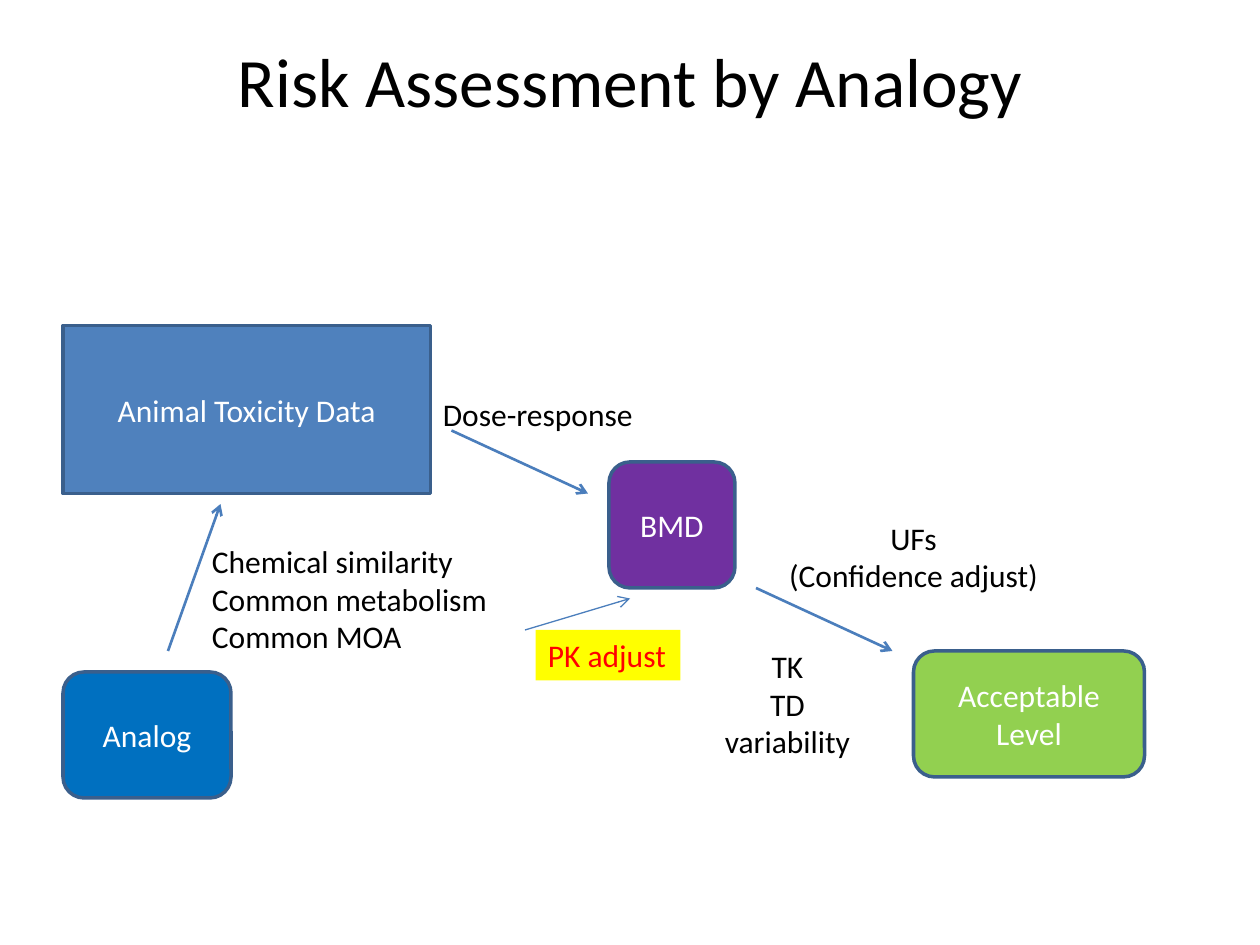
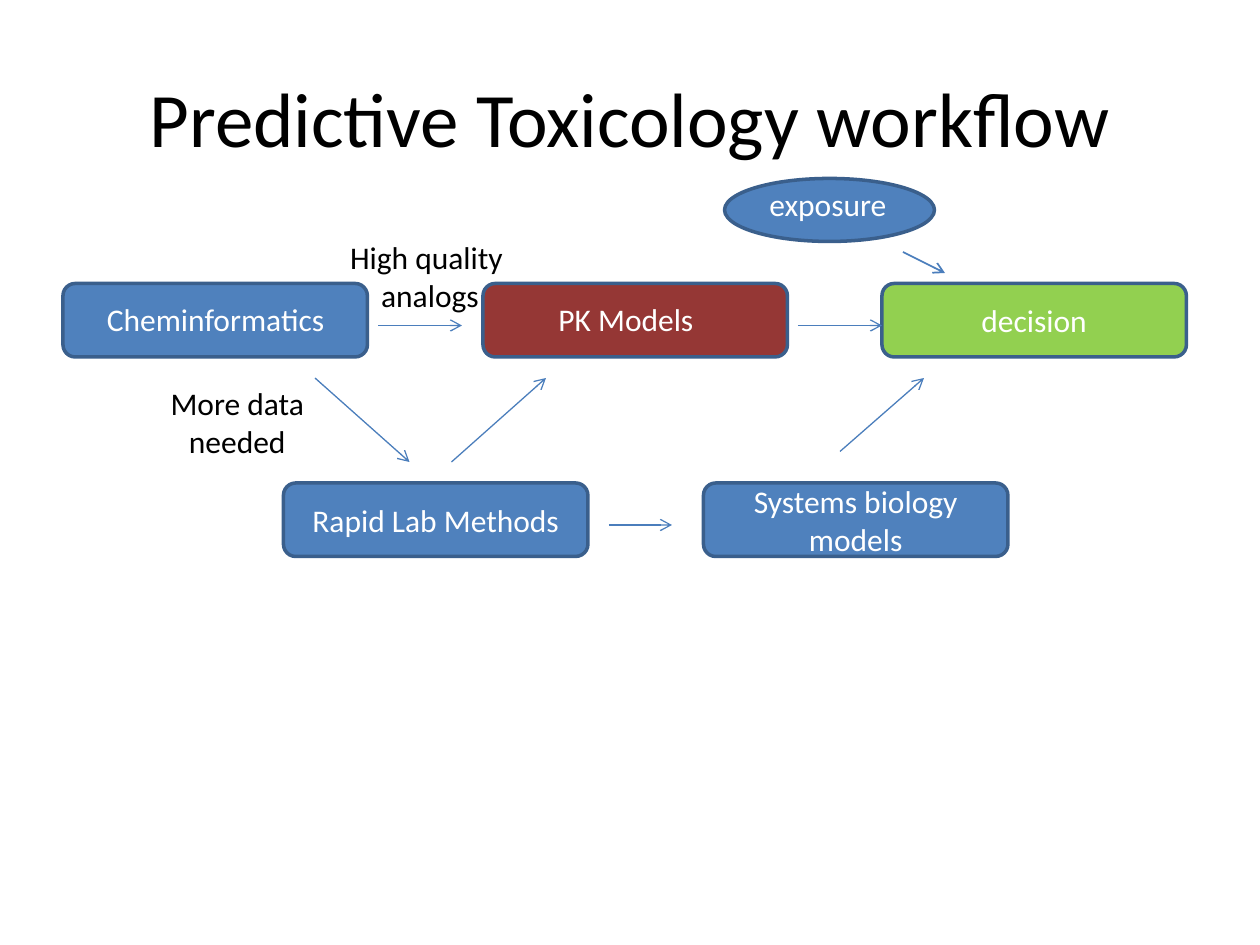
from dataclasses import dataclass

from lxml.etree import SubElement
from pptx import Presentation
from pptx.dml.color import RGBColor as RGB
from pptx.enum.shapes import MSO_CONNECTOR as CONNECTOR, MSO_SHAPE as SHAPE
from pptx.enum.text import MSO_ANCHOR as ANCHOR, MSO_AUTO_SIZE as AUTO, PP_ALIGN as ALIGN
from pptx.oxml.ns import qn
from pptx.util import Pt

PX = 7620
TITLE_ONLY = 5


@dataclass(frozen=True)
class Theme:
    font: str = "Calibri"
    black: str = "000000"
    white: str = "FFFFFF"
    blue: str = "4F81BD"
    outline: str = "3A5F8C"
    arrow: str = "4B7EBC"
    purple: str = "7030A0"
    green: str = "92D050"
    deep_blue: str = "0070C0"
    maroon: str = "953735"
    yellow: str = "FFFF00"
    red: str = "FF0000"
    body: float = 18
    heading: float = 44
    heading_small: float = 39.6
    border: float = 2
    thin: float = 0.75
    medium: float = 1
    thick: float = 1.5


def emu(*lengths):
    return [length * PX for length in lengths]


def apply(target, values):
    for name, value in values.items():
        setattr(target, name, value)


class Deck:
    def __init__(self, theme):
        self.theme = theme
        self.prs = Presentation()
        self.prs.slide_width, self.prs.slide_height = emu(1200, 900)
        self.slide = None

    def set_text(self, shape, text, color, size=None, align=ALIGN.CENTER, **frame):
        shape.text_frame.text = text
        apply(shape.text_frame, frame)
        for paragraph in shape.text_frame.paragraphs:
            paragraph.alignment = align
            apply(paragraph.font, {"name": self.theme.font,
                                   "size": Pt(size or self.theme.body)})
            paragraph.font.color.rgb = RGB.from_string(color)

    def titled_slide(self, text, size, **frame):
        self.slide = self.prs.slides.add_slide(self.prs.slide_layouts[TITLE_ONLY])
        title = self.slide.shapes.title
        apply(title, dict(zip(("left", "top", "width", "height"), emu(60, 36, 1080, 150))))
        settings = {"vertical_anchor": ANCHOR.MIDDLE, "auto_size": AUTO.NONE,
                    "word_wrap": True, **frame}
        self.set_text(title, text, self.theme.black, size, **settings)

    def box(self, bounds, text="", fill=None, kind=SHAPE.ROUNDED_RECTANGLE):
        shape = self.slide.shapes.add_shape(kind, *emu(*bounds))
        shape.shadow.inherit = False
        if fill:
            shape.fill.solid()
            shape.fill.fore_color.rgb = RGB.from_string(fill)
            shape.line.color.rgb = RGB.from_string(self.theme.outline)
            shape.line.width = Pt(self.theme.border)
        else:
            shape.fill.background()
            shape.line.fill.background()
        if text:
            color = self.theme.white if fill else self.theme.black
            self.set_text(shape, text, color, vertical_anchor=ANCHOR.MIDDLE, word_wrap=True)
        return shape

    def label(self, bounds, text, color=None, fill=None, align=ALIGN.LEFT, anchor=ANCHOR.TOP):
        label = self.slide.shapes.add_textbox(*emu(*bounds))
        if fill:
            label.fill.solid()
            label.fill.fore_color.rgb = RGB.from_string(fill)
        self.set_text(label, text, color or self.theme.black, align=align, word_wrap=False,
                      auto_size=AUTO.SHAPE_TO_FIT_TEXT, vertical_anchor=anchor)
        return label

    def arrow(self, start, end, weight):
        arrow = self.slide.shapes.add_connector(CONNECTOR.STRAIGHT, *emu(*start, *end))
        arrow.line.color.rgb = RGB.from_string(self.theme.arrow)
        arrow.line.width = Pt(weight)
        properties = arrow._element.spPr
        SubElement(properties.find(qn("a:ln")), qn("a:tailEnd"), type="arrow")
        SubElement(properties, qn("a:effectLst"))
        return arrow

    def group(self, *members):
        self.slide.shapes.add_group_shape(members)


def risk_assessment(deck):
    theme = deck.theme
    deck.titled_slide("Risk Assessment by Analogy", theme.heading_small,
                      vertical_anchor=ANCHOR.TOP, margin_top=0)
    deck.box((60, 310, 350, 160), "Animal Toxicity Data", theme.blue, SHAPE.RECTANGLE)
    for bounds, text, fill in (
        ((580, 440, 120, 120), "BMD", theme.purple),
        ((870, 620, 220, 120), "Acceptable Level", theme.green),
        ((730, 470, 280, 120), "UFs\n(Confidence adjust)", None),
        ((660, 610, 180, 120), "TK\nTD\nvariability", None),
        ((60, 640, 160, 120), "Analog", theme.deep_blue),
    ):
        deck.box(bounds, text, fill)
    for start, end, weight in (
        ((430, 410), (560, 470), theme.thick),
        ((720, 560), (850, 620), theme.thick),
        ((160, 620), (210, 480), theme.thick),
        ((500, 600), (600, 570), theme.thin),
    ):
        deck.arrow(start, end, weight)
    deck.label((410, 370, 208, 48), "Dose-response")
    deck.label((190, 510, 289, 121),
               "Chemical similarity\nCommon metabolism\nCommon MOA")
    deck.label((510, 600, 138, 48), "PK adjust", theme.red, theme.yellow)


def toxicology_workflow(deck):
    theme = deck.theme
    deck.titled_slide("Predictive Toxicology workflow", theme.heading)
    data_row, lab_row = 270, 460
    for left, top, text, fill in (
        (60, data_row, "", theme.blue),
        (460, data_row, "", theme.maroon),
        (840, data_row, "decision", theme.green),
        (270, lab_row, "Rapid Lab Methods", theme.blue),
        (670, lab_row, "Systems biology models", theme.blue),
    ):
        deck.box((left, top, 290, 70), text, fill)
    deck.label((90, 280, 234, 48), "Cheminformatics", theme.white)
    deck.label((520, 280, 155, 48), "PK Models", theme.white)
    deck.label((320, 220, 179, 85), "High quality \nanalogs",
               align=ALIGN.CENTER, anchor=ANCHOR.MIDDLE)
    deck.label((150, 360, 152, 85), "More data\nneeded", align=ALIGN.CENTER)
    for start, end in (
        ((360, 310), (440, 310)),
        ((760, 310), (840, 310)),
        ((300, 360), (390, 440)),
        ((430, 440), (520, 360)),
        ((580, 500), (640, 500)),
        ((800, 430), (880, 360)),
    ):
        deck.arrow(start, end, theme.thin)
    deck.group(
        deck.box((690, 170, 200, 60), fill=theme.blue, kind=SHAPE.OVAL),
        deck.label((720, 170, 137, 48), "exposure", theme.white,
                   align=ALIGN.CENTER, anchor=ANCHOR.MIDDLE),
        deck.arrow((860, 240), (900, 260), theme.medium),
    )


def main():
    deck = Deck(Theme())
    risk_assessment(deck)
    toxicology_workflow(deck)
    deck.prs.save("out.pptx")


if __name__ == "__main__":
    main()
